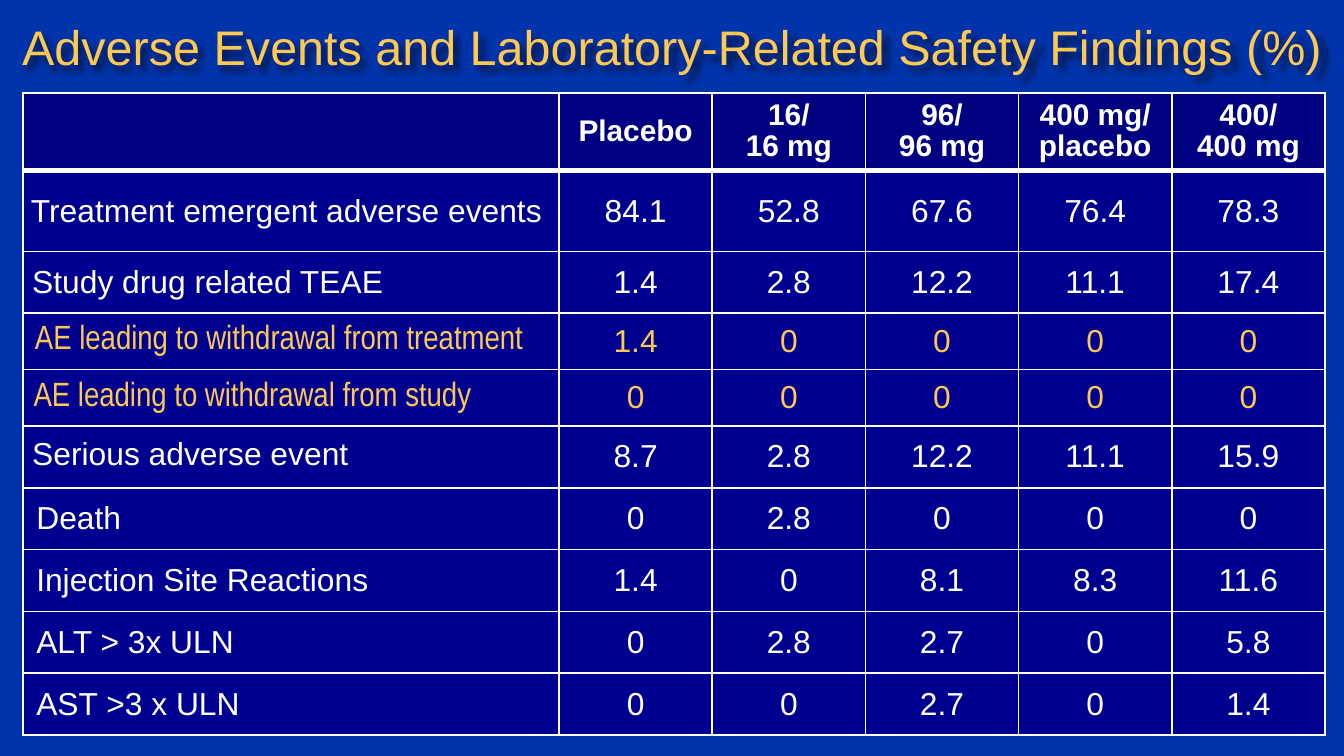
from lxml import etree
from pptx import Presentation
from pptx.dml.color import RGBColor
from pptx.enum import text
from pptx.oxml import ns, parse_xml
from pptx.util import Inches, Pt

WHITE, GOLD = "FFFFFF", "FFC850"
HEADER_FILL, BODY_FILL = "000080", "000090"


def color(value):
    return RGBColor.from_string(value)


def add_border(cell, side, points):
    """Draw one white cell edge; side is L, R, T or B. Call before filling the cell."""
    properties = cell._tc.get_or_add_tcPr()
    line = etree.SubElement(properties, ns.qn(f"a:ln{side}"), w=str(Pt(points)))
    fill = etree.SubElement(line, ns.qn("a:solidFill"))
    etree.SubElement(fill, ns.qn("a:srgbClr"), val=WHITE)


presentation = Presentation()
presentation.slide_width = Inches(10)
presentation.slide_height = Inches(10 * 9 / 16)
slide = presentation.slides.add_slide(presentation.slide_layouts[5])
slide.background.fill.solid()
slide.background.fill.fore_color.rgb = color("0034AA")

title = slide.shapes.title
title.left, title.top = Inches(0.01), Inches(0)
title.width, title.height = Inches(10), Inches(0.69)
title.text_frame.text = "Adverse Events and Laboratory-Related Safety Findings (%)"
title.text_frame.auto_size = text.MSO_AUTO_SIZE.NONE
title.text_frame.vertical_anchor = text.MSO_ANCHOR.MIDDLE
paragraph = title.text_frame.paragraphs[0]
paragraph.alignment = text.PP_ALIGN.CENTER
paragraph.font.name, paragraph.font.size = "Arial", Pt(26)
paragraph.font.color.rgb = color(GOLD)
title._element.spPr.append(parse_xml(
    f'<a:effectLst {ns.nsdecls("a")}>'
    '<a:outerShdw blurRad="50800" dist="38100" dir="2700000">'
    '<a:srgbClr val="000000"><a:alpha val="60000"/></a:srgbClr>'
    '</a:outerShdw></a:effectLst>'))

header = ["", "Placebo", "16/\v16 mg", "96/\v96 mg", "400 mg/\vplacebo", "400/\v400 mg"]
# label, values, row height, label margin
findings = [
    ("Treatment emergent adverse events", "84.1 52.8 67.6 76.4 78.3", 0.6, 0.06),
    ("Study drug related TEAE", "1.4 2.8 12.2 11.1 17.4", 0.46, 0.07),
    ("AE leading to withdrawal from treatment", "1.4 0 0 0 0", 0.42, 0.09),
    ("AE leading to withdrawal from study", "0 0 0 0 0", 0.42, 0.08),
    ("Serious adverse event", "8.7 2.8 12.2 11.1 15.9", 0.46, 0.07),
    ("Death", "0 2.8 0 0 0", 0.46, 0.1),
    ("Injection Site Reactions", "1.4 0 8.1 8.3 11.6", 0.46, 0.1),
    ("ALT > 3x ULN", "0 2.8 2.7 0 5.8", 0.46, 0.1),
    ("AST >3 x ULN", "0 0 2.7 0 1.4", 0.46, 0.1),
]
rows = [header] + [[label, *values.split()] for label, values, _, _ in findings]
heights = [0.58] + [height for _, _, height, _ in findings]
label_margins = [0.07] + [margin for _, _, _, margin in findings]

table = slide.shapes.add_table(
    len(rows), len(header), Inches(0.17), Inches(0.69), Inches(9.68), Inches(4.78)).table
for index, column in enumerate(table.columns):
    column.width = Inches(1.14 if index else 3.99)

for row_index, row in enumerate(rows):
    table.rows[row_index].height = Inches(heights[row_index])
    is_header = row_index == 0
    is_withdrawal = "withdrawal" in row[0]
    for column_index, value in enumerate(row):
        is_label = column_index == 0
        cell = table.cell(row_index, column_index)
        for side in "LRTB":
            under_header = (row_index, side) in [(0, "B"), (1, "T")]
            add_border(cell, side, 3 if under_header else 1)
        cell.fill.solid()
        cell.fill.fore_color.rgb = color(HEADER_FILL if is_header else BODY_FILL)
        cell.vertical_anchor = text.MSO_ANCHOR.MIDDLE
        side_margin = 0.07 if is_header or column_index > 3 else 0.03
        cell.margin_left = Inches(label_margins[row_index] if is_label else side_margin)
        cell.margin_right = Inches(side_margin)
        cell.margin_top = cell.margin_bottom = 0

        cell.text = value
        paragraph = cell.text_frame.paragraphs[0]
        paragraph.alignment = text.PP_ALIGN.LEFT if is_label else text.PP_ALIGN.CENTER
        if is_header:
            paragraph.line_spacing = 0.95
        elif value == "Serious adverse event":
            paragraph.line_spacing = 0.85
        narrow = is_label and is_withdrawal
        font = paragraph.font
        font.name = "Arial Narrow" if narrow else "Arial"
        font.size = Pt(16 if is_header else 18 if narrow else 17)
        font.bold = is_header
        font.color.rgb = color(GOLD if is_withdrawal else WHITE)

presentation.save("out.pptx")
